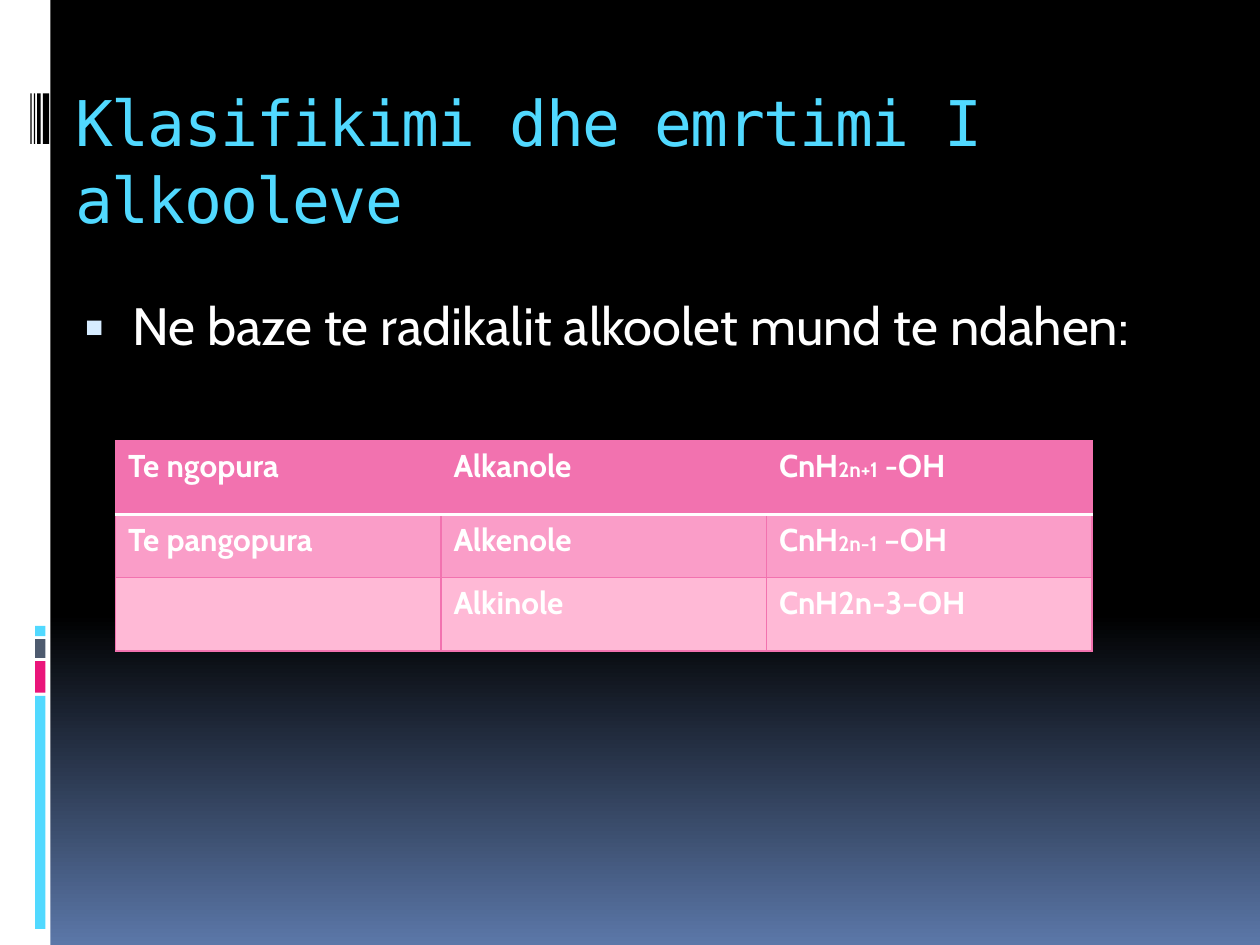
from lxml import etree
from pptx import Presentation
from pptx.dml.color import RGBColor
from pptx.enum.shapes import MSO_SHAPE
from pptx.enum.text import MSO_ANCHOR, MSO_AUTO_SIZE, PP_ALIGN
from pptx.oxml.ns import qn
from pptx.util import Pt

RECTANGLE = MSO_SHAPE.RECTANGLE
TOP = MSO_ANCHOR.TOP
NO_AUTOFIT = MSO_AUTO_SIZE.NONE
LEFT = PP_ALIGN.LEFT
BODY_FONT = "Cabin"
TITLE_FONT = "DejaVu Sans Mono"
CYAN, WHITE, BLACK, PINK = "51D9FF", "FFFFFF", "000000", "F272AF"
ROW_FILLS = [PINK, "FA9DC8", "FFB9D6"]
ROWS = [
    [["Te ngopura"], ["Alkanole"], ["CnH", "2n+1", " -OH"]],
    [["Te pangopura"], ["Alkenole"], ["CnH", "2n-1", " –OH"]],
    [[], ["Alkinole"], ["CnH2n-3–OH"]],
]


def color(value):
    """Turn a hex string into a colour."""
    return RGBColor.from_string(value)


def add_text(para, text, size=18, font=BODY_FONT, fill=WHITE, bold=False, spacing=0):
    """Append one formatted span to a paragraph."""
    span = para.add_run()
    span.text = text
    span.font.size = Pt(size)
    span.font.name = font
    span.font.bold = bold
    span.font.color.rgb = color(fill)
    if spacing:
        span.font._element.set("spc", str(int(spacing * 100)))


def add_bar(page, left, top, width, height, fill):
    """Draw one plain filled rectangle."""
    bar = page.shapes.add_shape(RECTANGLE, Pt(left), Pt(top), Pt(width), Pt(height))
    bar.shadow.inherit = False
    bar.fill.solid()
    bar.fill.fore_color.rgb = color(fill)
    bar.line.fill.background()


def place_frame(holder, left, top, width, height, inset):
    """Place a placeholder and return its top-anchored first paragraph."""
    holder.left, holder.top = Pt(left), Pt(top)
    holder.width, holder.height = Pt(width), Pt(height)
    frame = holder.text_frame
    frame.word_wrap = True
    frame.auto_size = NO_AUTOFIT
    frame.vertical_anchor = TOP
    frame.margin_top = Pt(inset)
    para = frame.paragraphs[0]
    para.alignment = LEFT
    para.space_before = Pt(0)
    return para


def paint_background(page):
    """Fade the page from black to blue in its lower third."""
    fill = page.background.fill
    fill.gradient()
    fill.gradient_angle = 270
    for stop, position, value in zip(fill.gradient_stops, (0.65, 1), (BLACK, "5B77A8")):
        stop.position = position
        stop.color.rgb = color(value)


def build_rail(page, left, top, width, height):
    """Draw the white side rail with its coloured and black bars."""
    add_bar(page, left, top, width, height, WHITE)
    for offset, length, fill in [
        (397.6, 133.2, CYAN),
        (377.8, 18, "EA157A"),
        (365.2, 10.8, "4E5B6F"),
        (357.7, 5.8, CYAN),
    ]:
        add_bar(page, left + 20.1, top + offset, 5.8, length, fill)
    for offset, thickness in [(24.5, 3.6), (21.2, 2), (19.4, 0.7), (17.4, 0.7)]:
        add_bar(page, left + offset, top + 53.4, thickness, 28.8, BLACK)


def build_title(page, left, top, width, height):
    """Fill the title placeholder."""
    para = place_frame(page.shapes.title, left, top, width, height, 47.5)
    para.line_spacing = Pt(43.6)
    add_text(para, "Klasifikimi dhe emrtimi I alkooleve",
             size=36, font=TITLE_FONT, fill=CYAN, spacing=-1)


def build_body(page, left, top, width, height):
    """Fill the body placeholder with its bulleted line."""
    para = place_frame(page.placeholders[1], left, top, width, height, 47.4)
    add_text(para, "Ne baze te radikalit alkoolet mund te ndahen:", size=30)
    props = para._p.get_or_add_pPr()
    props.set("marL", str(Pt(32.4)))
    props.set("indent", str(Pt(-27.4)))
    bullet_color = etree.SubElement(props, qn("a:buClr"))
    etree.SubElement(bullet_color, qn("a:srgbClr"), val="D6ECFF")
    etree.SubElement(props, qn("a:buSzPct"), val="95000")
    etree.SubElement(props, qn("a:buFont"), typeface=BODY_FONT)
    etree.SubElement(props, qn("a:buChar"), char="▪")


def set_borders(cell, row_index):
    """Outline a cell in pink, with a white rule under the first row."""
    props = cell._tc.get_or_add_tcPr()
    for side in "LRTB":
        is_rule = (row_index, side) in [(0, "B"), (1, "T")]
        width, value = (1.5, WHITE) if is_rule else (0.94, PINK)
        line = etree.SubElement(props, qn("a:ln" + side), w=str(Pt(width)))
        fill = etree.SubElement(line, qn("a:solidFill"))
        etree.SubElement(fill, qn("a:srgbClr"), val=value)


def build_table(page, left, top, width, height):
    """Add the table of alcohol classes."""
    columns = len(ROWS[0])
    table = page.shapes.add_table(
        len(ROWS), columns, Pt(left), Pt(top), Pt(width), Pt(height)).table
    for column in table.columns:
        column.width = Pt(width / columns)
    for row, share in zip(table.rows, (0.35, 0.3, 0.35)):
        row.height = Pt(height * share)
    for row_index, entries in enumerate(ROWS):
        for column_index, parts in enumerate(entries):
            cell = table.cell(row_index, column_index)
            set_borders(cell, row_index)
            cell.fill.solid()
            cell.fill.fore_color.rgb = color(ROW_FILLS[row_index])
            para = cell.text_frame.paragraphs[0]
            for part_index, part in enumerate(parts):
                add_text(para, part, size=12 if part_index == 1 else 18, bold=True)


def main():
    """Build and save the deck."""
    deck = Presentation()
    deck.slide_width, deck.slide_height = Pt(720), Pt(540)
    page = deck.slides.add_slide(deck.slide_layouts[1])
    paint_background(page)
    build_rail(page, 0, 0, 28.8, 540)
    build_title(page, 36, 0, 648, 102)
    build_body(page, 36, 120, 648, 360)
    build_table(page, 66, 252, 558, 120)
    deck.save("out.pptx")


if __name__ == "__main__":
    main()
